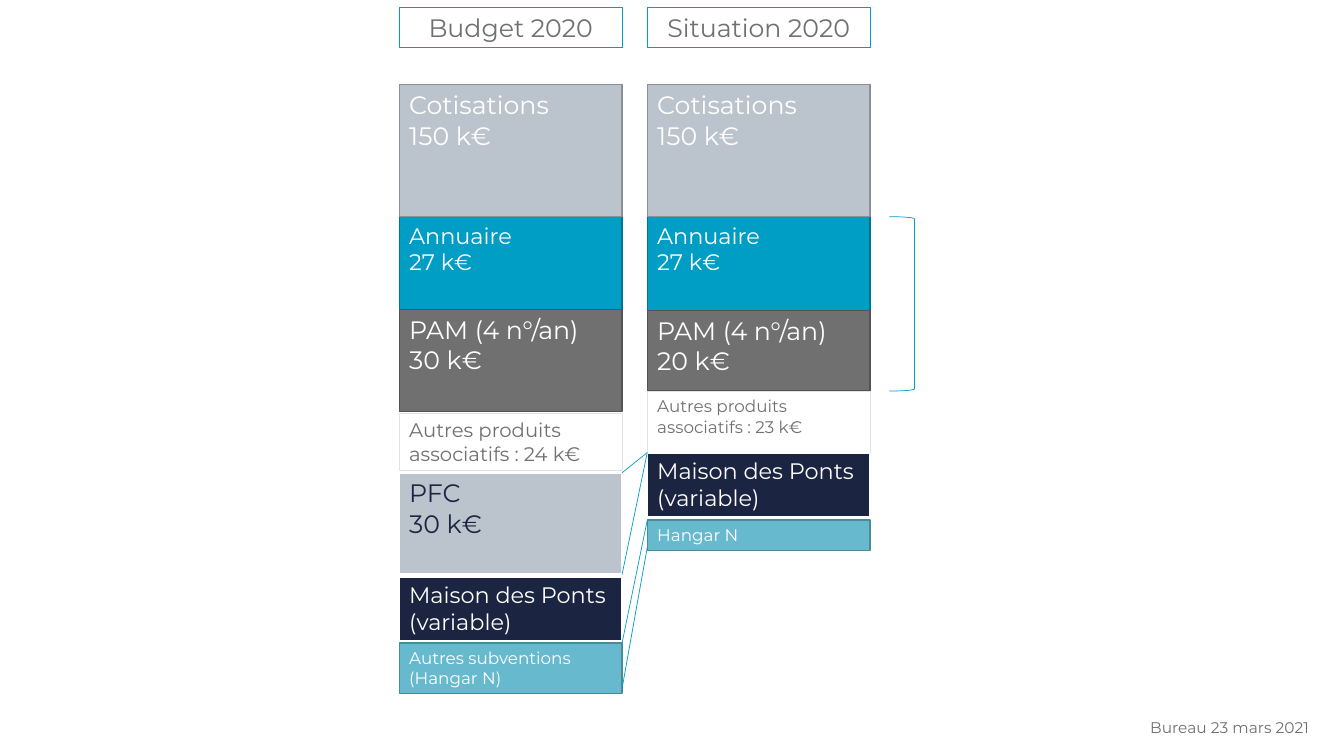
"""Build the slide comparing the 2020 budget with the 2020 situation."""
from lxml import etree
from pptx import Presentation
from pptx.dml.color import RGBColor
from pptx.enum.shapes import MSO_CONNECTOR, MSO_SHAPE
from pptx.enum.text import MSO_ANCHOR, PP_ALIGN
from pptx.oxml.ns import qn
from pptx.util import Inches, Pt

RECT, BRACKET = MSO_SHAPE.RECTANGLE, MSO_SHAPE.RIGHT_BRACKET
LINE = MSO_CONNECTOR.STRAIGHT
TOP = MSO_ANCHOR.TOP
LEFT, CENTER = PP_ALIGN.LEFT, PP_ALIGN.CENTER

WHITE = RGBColor(0xFF, 0xFF, 0xFF)
GRAY = RGBColor(0x70, 0x70, 0x70)
COAL = RGBColor(0x53, 0x53, 0x53)
BLUE = RGBColor(0x00, 0x9D, 0xC5)
DEEP = RGBColor(0x00, 0x74, 0x92)
SILVER = RGBColor(0xBB, 0xC3, 0xCD)
STEEL = RGBColor(0x8A, 0x90, 0x98)
PALE = RGBColor(0xDF, 0xE3, 0xE9)
NAVY = RGBColor(0x1B, 0x25, 0x42)
AQUA = RGBColor(0x67, 0xBA, 0xCE)
TEAL = RGBColor(0x4C, 0x8A, 0x98)
FONT = "Montserrat"

# kind: fill, border, border width, text colour
STYLES = {
    "dues": (SILVER, STEEL, 1, WHITE),
    "book": (BLUE, DEEP, 1, WHITE),
    "mag": (GRAY, COAL, 1, WHITE),
    "other": (None, PALE, 0.75, GRAY),
    "pfc": (SILVER, WHITE, 1.5, NAVY),
    "house": (NAVY, WHITE, 1.5, WHITE),
    "grant": (AQUA, TEAL, 1, WHITE),
}
# kind, text size, gap above, height, lines
BUDGET = [
    ("dues", 18, 0, 1.31, ["Cotisations", "150 k€"]),
    ("book", 16, 0, 0.92, ["Annuaire", "27 k€"]),
    ("mag", 18, 0, 1.01, ["PAM (4 n°/an)", "30 k€"]),
    ("other", 14, 0.02, 0.57, ["Autres produits associatifs : 24 k€"]),
    ("pfc", 18, 0.02, 1.01, ["PFC", "30 k€"]),
    ("house", 16, 0.02, 0.64, ["Maison des Ponts", "(variable)"]),
    ("grant", 12, 0.02, 0.5, ["Autres subventions (Hangar N)"]),
]
ACTUAL = [
    ("dues", 18, 0, 1.31, ["Cotisations", "150 k€"]),
    ("book", 16, 0, 1.08, ["Annuaire", "27 k€"]),
    ("mag", 18, -0.15, 0.8, ["PAM (4 n°/an)", "20 k€"]),
    ("other", 12, 0, 0.61, ["Autres produits associatifs : 23 k€"]),
    ("house", 16, 0, 0.64, ["Maison des Ponts", "(variable)"]),
    ("grant", 12, 0.03, 0.3, ["Hangar N"]),
]
COLUMNS = [("Budget 2020", BUDGET), ("Situation 2020", ACTUAL)]
FOOTER = "Bureau 23 mars 2021"

WIDE, HIGH = 13.33, 7.5
EDGE, WIDTH, STEP = 3.96, 2.21, 2.46
HEAD, START = 0.07, 0.84


def write(shape, lines, size=18, color=GRAY, align=LEFT):
    """Fill a shape with formatted paragraphs."""
    frame = shape.text_frame
    frame.word_wrap = True
    frame.vertical_anchor = TOP
    frame.text = "\n".join(lines)
    for para in frame.paragraphs:
        para.alignment = align
        para.font.name = FONT
        para.font.size = Pt(size)
        para.font.color.rgb = color


def draw(slide, kind, box, fill, edge, weight):
    """Add a preset shape with its fill and border."""
    shape = slide.shapes.add_shape(kind, *map(Inches, box))
    shape.shadow.inherit = False
    if fill is None:
        shape.fill.background()
    else:
        shape.fill.solid()
        shape.fill.fore_color.rgb = fill
    shape.line.color.rgb = edge
    shape.line.width = Pt(weight)
    return shape


def stack(slide, left, rows):
    """Stack the blocks of a column and return their tops and bottoms."""
    spans, top = {}, START
    for kind, _, gap, height, _ in rows:
        top += gap
        spans[kind] = (top, top + height)
        top += height
    for kind, size, _, height, lines in sorted(rows, key=lambda r: r[0] == "dues"):
        fill, edge, weight, color = STYLES[kind]
        box = (left, spans[kind][0], WIDTH, height)
        write(draw(slide, RECT, box, fill, edge, weight), lines, size=size, color=color)
    return spans


def link(slide, start, end):
    """Join the two columns with a thin line."""
    ends = (EDGE + WIDTH, start, EDGE + STEP, end)
    line = slide.shapes.add_connector(LINE, *map(Inches, ends))
    line.line.color.rgb = BLUE
    line.line.width = Pt(0.5)
    etree.SubElement(line._element.spPr, qn("a:effectLst"))


def main():
    """Assemble and save the slide."""
    deck = Presentation()
    deck.slide_width, deck.slide_height = Inches(WIDE), Inches(HIGH)
    slide = deck.slides.add_slide(deck.slide_layouts[6])

    spans = []
    for col, (title, rows) in enumerate(COLUMNS):
        left = EDGE + col * STEP
        head = draw(slide, RECT, (left, HEAD, WIDTH, 0.4), None, BLUE, 0.75)
        write(head, [title], align=CENTER)
        spans.append(stack(slide, left, rows))

    plan, real = spans
    link(slide, plan["pfc"][0], real["house"][0])
    link(slide, plan["pfc"][1], real["house"][0])
    link(slide, plan["grant"][0], real["grant"][0])
    link(slide, plan["grant"][1] - 0.05, real["grant"][1] - 0.03)

    top, end = real["book"][0], real["mag"][1]
    draw(slide, BRACKET, (8.82, top, 0.25, end - top), None, BLUE, 0.5)

    note = slide.shapes.add_textbox(*map(Inches, (11.31, 7.07, 1.91, 0.29)))
    write(note, [FOOTER], size=11)
    deck.save("out.pptx")


if __name__ == "__main__":
    main()
